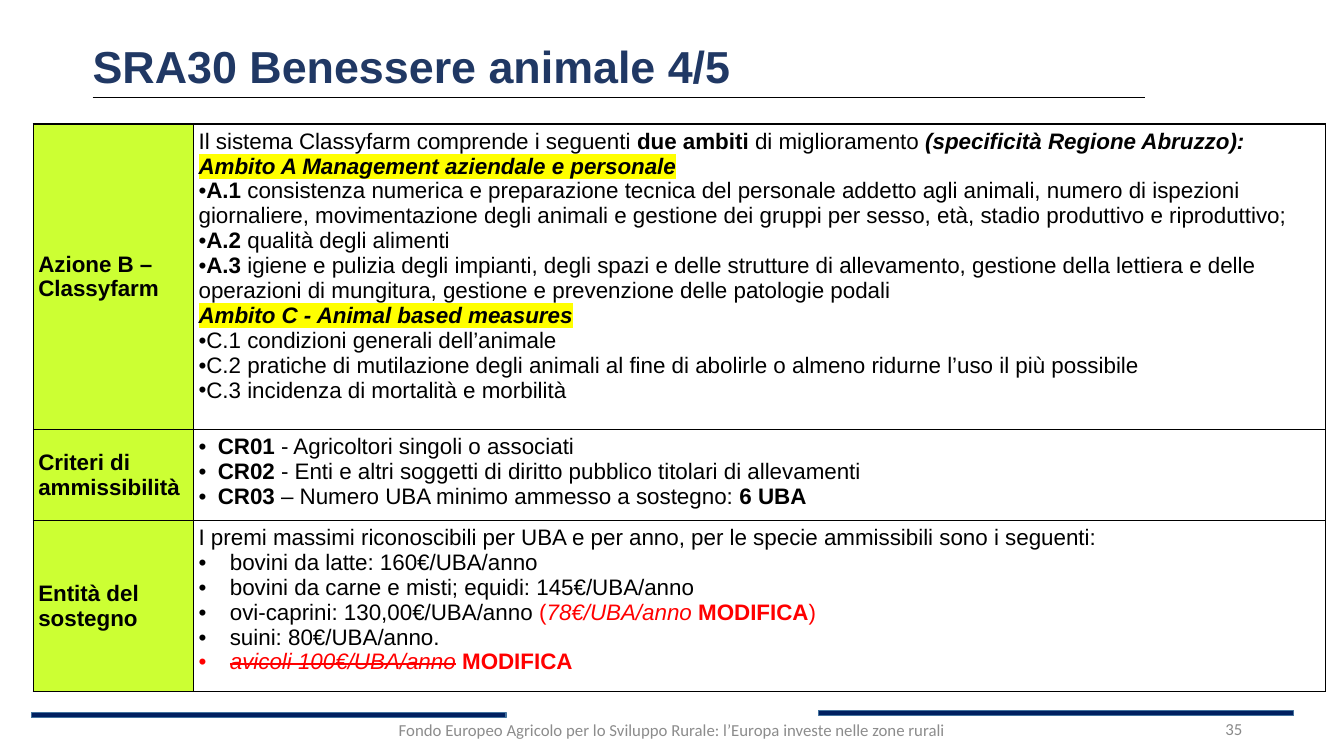
from dataclasses import dataclass

from lxml.etree import SubElement
from pptx import Presentation
from pptx.dml.color import RGBColor
from pptx.enum.shapes import MSO_CONNECTOR, MSO_SHAPE
from pptx.enum.text import MSO_ANCHOR, PP_ALIGN
from pptx.oxml import parse_xml
from pptx.oxml.ns import nsdecls, qn
from pptx.util import Inches, Pt


@dataclass(frozen=True)
class Theme:
    title: str = "203864"
    ink: str = "000000"
    change: str = "FF0000"
    label: str = "CCFF33"
    paper: str = "FFFFFF"
    marker: str = "FFFF00"
    bar: str = "002060"
    bar_edge: str = "43739E"
    footer: str = "8C8C8C"
    number: str = "898989"
    title_size: int = 32
    body_size: int = 16
    footer_size: int = 12
    body_font: str = "Arial"
    footer_font: str = "Calibri"


theme = Theme()
LEFT, CENTER, RIGHT, JUSTIFY = PP_ALIGN.LEFT, PP_ALIGN.CENTER, PP_ALIGN.RIGHT, PP_ALIGN.JUSTIFY


def add_span(para, text, color, **format_values):
    span = para.add_run()
    span.text = text
    span.font.color.rgb = RGBColor.from_string(color)
    for name, value in format_values.items():
        setattr(span.font, name, value)
    return span


def fill_cell(cell, paragraphs, color, anchor):
    """Write (alignment, bullet indent or None, [(text, style letters)]) paragraphs.

    Style letters: b bold, i italic, h highlighted, r red, s struck through.
    """
    cell.fill.solid()
    cell.fill.fore_color.rgb = RGBColor.from_string(color)
    cell.vertical_anchor = anchor
    for side in ("left", "right", "top", "bottom"):
        setattr(cell, f"margin_{side}", Inches(0.05))
    for position, edge in enumerate(("lnL", "lnR", "lnT", "lnB")):
        border = parse_xml(
            f'<a:{edge} {nsdecls("a")} w="{Pt(1)}"><a:solidFill>'
            f'<a:srgbClr val="{theme.ink}"/></a:solidFill></a:{edge}>')
        cell._tc.get_or_add_tcPr().insert(position, border)
    for index, (alignment, indent, spans) in enumerate(paragraphs):
        frame = cell.text_frame
        para = frame.add_paragraph() if index else frame.paragraphs[0]
        para.alignment = alignment
        if indent is not None:
            properties = para._p.get_or_add_pPr()
            properties.set("marL", str(Inches(indent)))
            properties.set("indent", str(-Inches(indent)))
            SubElement(properties, qn("a:buFont"), typeface=theme.body_font)
            SubElement(properties, qn("a:buChar"), char="•")
        for text, style in spans:
            span = add_span(para, text, theme.change if "r" in style else theme.ink,
                            name=theme.body_font, size=Pt(theme.body_size),
                            bold="b" in style, italic="i" in style)
            run_properties = span._r.get_or_add_rPr()
            if "s" in style:
                run_properties.set("strike", "sngStrike")
            if "h" in style:
                run_properties.find(qn("a:solidFill")).addnext(parse_xml(
                    f'<a:highlight {nsdecls("a")}><a:srgbClr val="{theme.marker}"/></a:highlight>'))


deck = Presentation()
deck.slide_width, deck.slide_height = Inches(13.33), Inches(7.5)
page = deck.slides.add_slide(deck.slide_layouts[6])

for left, top in ((8.12, 7.05), (0.31, 7.07)):
    bar = page.shapes.add_shape(MSO_SHAPE.RECTANGLE, Inches(left), Inches(top),
                                Inches(4.71), Inches(0.05))
    bar.shadow.inherit = False
    bar.fill.solid()
    bar.fill.fore_color.rgb = RGBColor.from_string(theme.bar)
    bar.line.color.rgb = RGBColor.from_string(theme.bar_edge)
    bar.line.width = Pt(1)

title_rule = page.shapes.add_connector(MSO_CONNECTOR.STRAIGHT, Inches(0.92), Inches(0.97),
                                       Inches(11.36), Inches(0.97))
title_rule.line.color.rgb = RGBColor.from_string(theme.ink)
title_rule.line.width = Pt(0.5)
SubElement(title_rule._element.spPr, qn("a:effectLst"))

title_format = dict(name=theme.body_font, size=Pt(theme.title_size), bold=True)
footer_format = dict(name=theme.footer_font, size=Pt(theme.footer_size))
captions = [
    ("35", (9.42, 7.03, 3, 0.4), RIGHT, 1.0, theme.number, footer_format),
    ("Fondo Europeo Agricolo per lo Sviluppo Rurale: l’Europa investe nelle zone rurali",
     (3.04, 7.04, 7.25, 0.4), CENTER, 1.0, theme.footer, footer_format),
    ("SRA30 Benessere animale 4/5", (0.82, 0.41, 12.24, 0.55), LEFT, 0.9,
     theme.title, title_format),
]
for text, place, alignment, spacing, color, format_values in captions:
    box = page.shapes.add_textbox(*map(Inches, place))
    box.text_frame.word_wrap = True
    box.text_frame.vertical_anchor = MSO_ANCHOR.MIDDLE
    para = box.text_frame.paragraphs[0]
    para.alignment = alignment
    para.line_spacing = spacing
    add_span(para, text, color, **format_values)

classyfarm = [
    (JUSTIFY, None, [("Il sistema Classyfarm comprende i seguenti ", ""), ("due ambiti ", "b"),
                     ("di miglioramento ", ""), ("(specificità Regione Abruzzo):", "bi")]),
    (JUSTIFY, None, [("Ambito A Management aziendale e personale", "bih")]),
    (LEFT, 0, [("A.1 ", "b"),
               ("consistenza numerica e preparazione tecnica del personale addetto agli animali, "
                "numero di ispezioni giornaliere, movimentazione degli animali e gestione dei "
                "gruppi per sesso, età, stadio produttivo e riproduttivo;", "")]),
    (LEFT, 0, [("A.2 ", "b"), ("qualità degli alimenti", "")]),
    (LEFT, 0, [("A.3 ", "b"),
               ("igiene e pulizia degli impianti, degli spazi e delle strutture di allevamento, "
                "gestione della lettiera e delle operazioni di mungitura, gestione e prevenzione "
                "delle patologie podali", "")]),
    (JUSTIFY, None, [("Ambito C - Animal based measures", "bih")]),
    (JUSTIFY, 0, [("C.1 condizioni generali dell’animale", "")]),
    (JUSTIFY, 0, [("C.2 pratiche di mutilazione degli animali al fine di abolirle o almeno "
                   "ridurne l’uso il più possibile", "")]),
    (JUSTIFY, 0, [("C.3 incidenza di mortalità e morbilità", "")]),
]
criteria = [
    (JUSTIFY, 0.19, [("CR01", "b"), (" - Agricoltori singoli o associati", "")]),
    (JUSTIFY, 0.19, [("CR02", "b"),
                     (" - Enti e altri soggetti di diritto pubblico titolari di allevamenti", "")]),
    (JUSTIFY, 0.19, [("CR03", "b"), (" – Numero UBA minimo ammesso a sostegno: ", ""),
                     ("6 UBA", "b")]),
]
support = [
    (LEFT, None, [("I premi massimi riconoscibili per UBA e per anno, per le specie ammissibili "
                   "sono i seguenti:", "")]),
    (LEFT, 0.31, [("bovini da latte: 160€/UBA/anno", "")]),
    (LEFT, 0.31, [("bovini da carne e misti; equidi: 145€/UBA/anno", "")]),
    (LEFT, 0.31, [("ovi-caprini: 130,00€/UBA/anno ", ""), ("(", "r"), ("78€/UBA/anno ", "ri"),
                  ("MODIFICA", "rb"), (")", "r")]),
    (LEFT, 0.31, [("suini: 80€/UBA/anno.", "")]),
    (LEFT, 0.31, [("avicoli 100€/UBA/anno", "ris"), (" ", "ri"), ("MODIFICA", "rb")]),
]
rows = [
    ("Azione B – Classyfarm", classyfarm, 2.81),
    ("Criteri di ammissibilità", criteria, 0.84),
    ("Entità del sostegno", support, 1.58),
]
column_widths = (1.59, 11.23)
table = page.shapes.add_table(
    len(rows), len(column_widths), Inches(0.33), Inches(1.23),
    Inches(sum(column_widths)), Inches(sum(height for _, _, height in rows))).table
table.first_row = table.horz_banding = False
for column, width in zip(table.columns, column_widths):
    column.width = Inches(width)
for index, (label, paragraphs, height) in enumerate(rows):
    table.rows[index].height = Inches(height)
    fill_cell(table.cell(index, 0), [(LEFT, None, [(label, "b")])], theme.label, MSO_ANCHOR.MIDDLE)
    fill_cell(table.cell(index, 1), paragraphs, theme.paper, MSO_ANCHOR.TOP)

deck.save("out.pptx")
